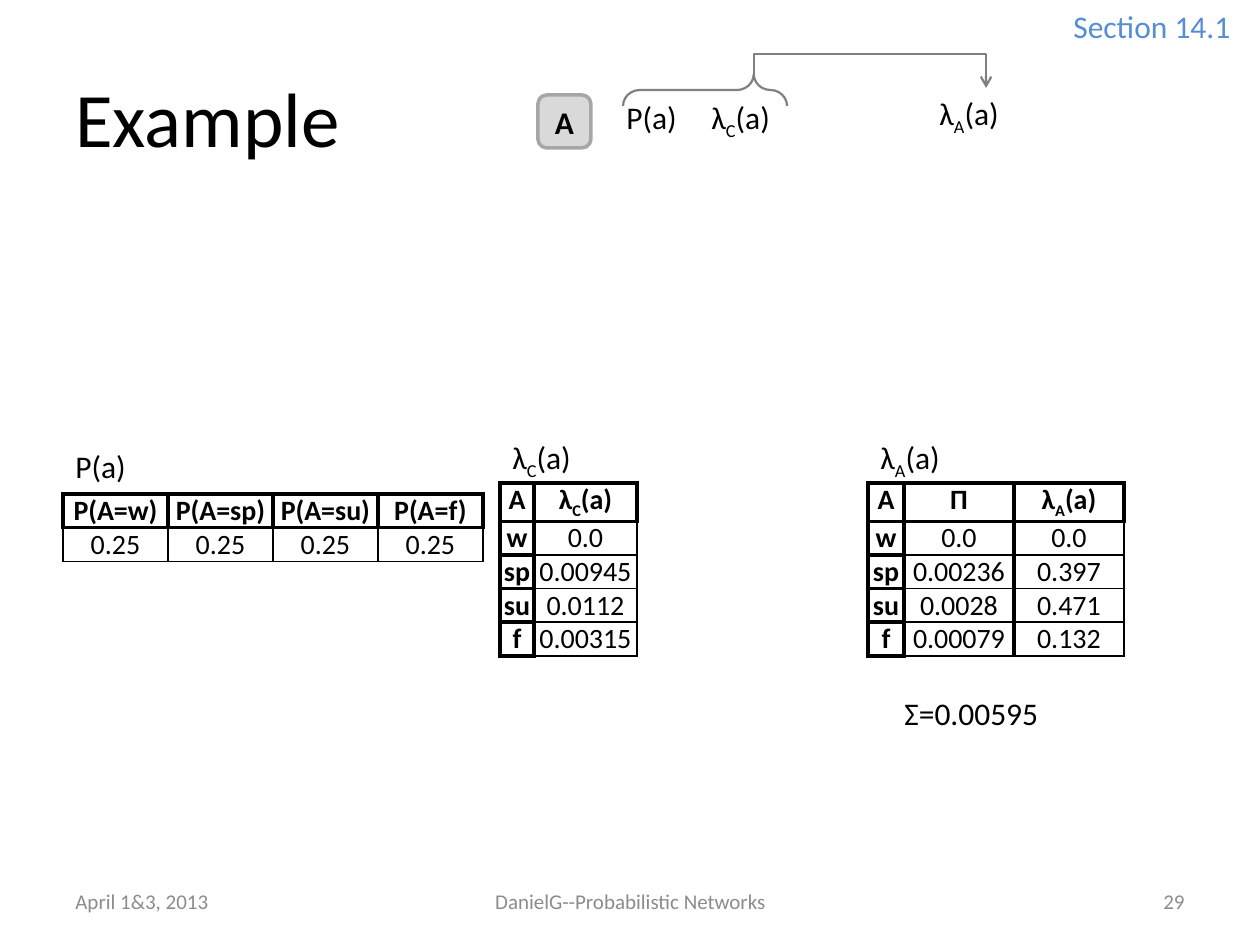
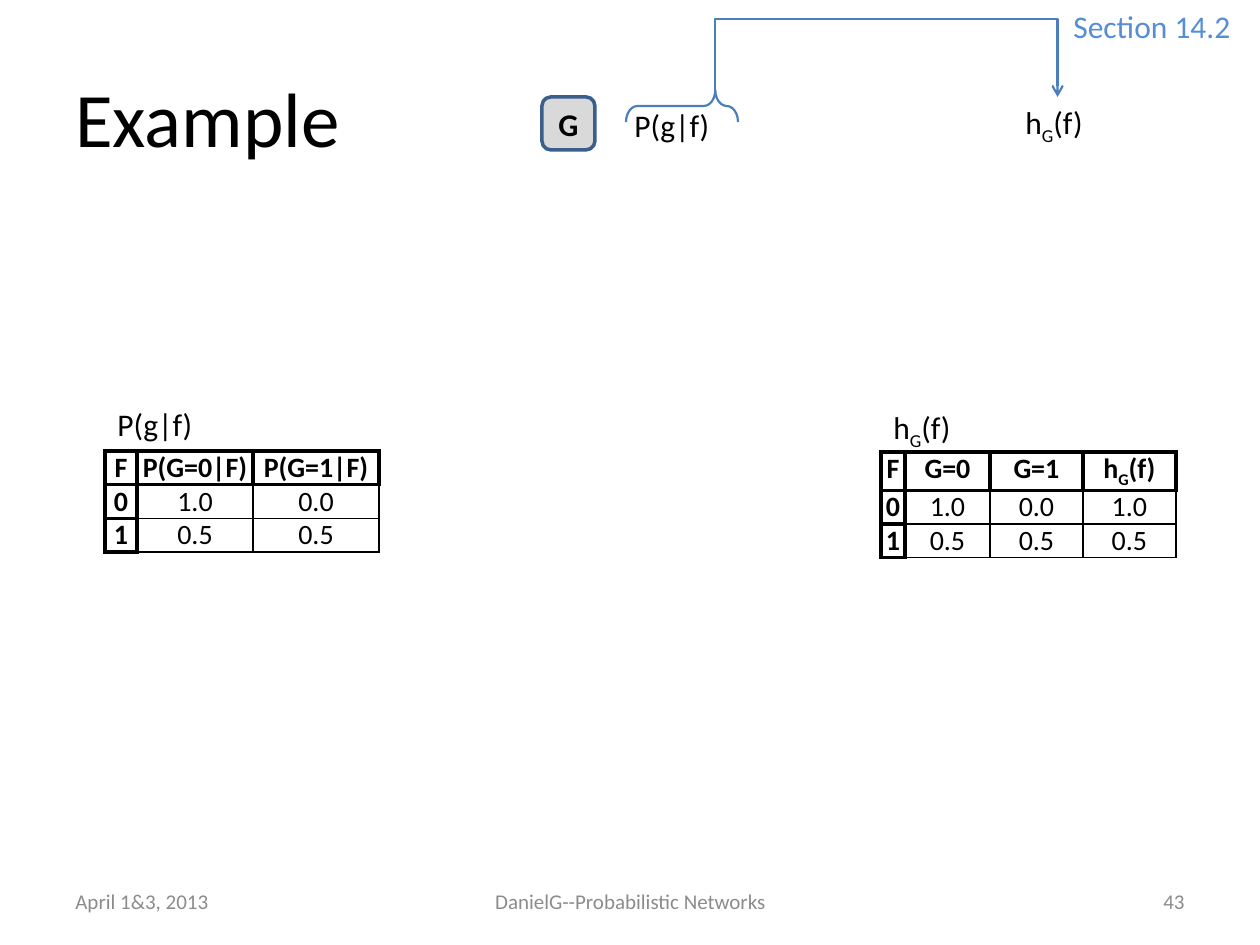
from lxml import etree
from pptx import Presentation
from pptx import util as u
from pptx.dml.color import RGBColor
from pptx.enum import shapes, text
from pptx.oxml.ns import qn

COLOURS = {"ink": "000000", "footer": "8C8C8C", "section": "558ED5",
           "badge": "D9D9D9", "grey_edge": "A6A6A6", "grey_line": "808080",
           "blue_edge": "3A5F8C", "blue_line": "4B7EBC"}
FONT = "Calibri"
SLIDE_W, SLIDE_H = 1260, 945
BADGE = 53
LABEL_H = 50
BRACE_H = 32
BRACE_CURVE, BRACE_TIP = 0.576, 0.203
THICK, THIN = 2.25, 1
LEFT, CENTER, RIGHT = text.PP_ALIGN.LEFT, text.PP_ALIGN.CENTER, text.PP_ALIGN.RIGHT


def px(length):
    return u.Emu(round(length * 914400 / 126))


def rgb(name):
    return RGBColor.from_string(COLOURS[name])


def write(frame, words, size=18, colour="ink", bold=False, align=LEFT):
    """Fill a text frame; the letter after an underscore is a subscript."""
    para = frame.paragraphs[0]
    para.alignment = align
    base, _, tail = words.partition("_")
    for part, is_sub in ((base, False), (tail[:1], True), (tail[1:], False)):
        if not part:
            continue
        run = para.add_run()
        run.text = part
        run.font.name, run.font.size, run.font.bold = FONT, u.Pt(size), bold
        run.font.color.rgb = rgb(colour)
        if is_sub:
            run.font._element.set("baseline", "-25000")


def add_label(slide, words, box, middle=False, wrap=True, **style):
    frame = slide.shapes.add_textbox(*map(px, box)).text_frame
    frame.word_wrap = wrap
    if middle:
        frame.vertical_anchor = text.MSO_ANCHOR.MIDDLE
    write(frame, words, **style)


def add_outline(slide, kind, box, line, width):
    shape = slide.shapes.add_shape(kind, *map(px, box))
    shape.shadow.inherit = False
    shape.fill.background()
    shape.line.color.rgb = rgb(line)
    shape.line.width = u.Pt(width)
    return shape


# Title, section mark and footer shared by the slides
def add_page(prs, section, number):
    slide = prs.slides.add_slide(prs.slide_layouts[6])
    add_label(slide, "Example", (63, 38, 1134, 157), middle=True, size=44)
    add_label(slide, section, (1061, 1, 192, LABEL_H), wrap=False, colour="section")
    for words, left, width, align in (
            ("April 1&3, 2013", 63, 294, LEFT),
            ("DanielG--Probabilistic Networks", 431, 399, CENTER),
            (number, 903, 294, RIGHT)):
        add_label(slide, words, (left, 876, width, LABEL_H), middle=True,
                  size=12, colour="footer", align=align)
    return slide


# Elbow arrow rising from start to peak, then dropping onto end
def add_elbow_arrow(slide, start, end, peak, line):
    (x1, y1), (x2, y2) = start, end
    drop, span = y2 - y1, x2 - x1
    left, top = (x1 + x2 - drop) / 2, (y1 + y2 - span) / 2
    arrow = slide.shapes.add_connector(
        shapes.MSO_CONNECTOR.ELBOW, px(left + drop), px(top), px(left), px(top + span))
    arrow.line.color.rgb = rgb(line)
    arrow.line.width = u.Pt(1.25)
    props = arrow._element.spPr
    props.find(qn("a:xfrm")).set("rot", "16200000")
    guides = props.find(qn("a:prstGeom")).find(qn("a:avLst"))
    bend = round((peak - y1) / drop * 100000)
    etree.SubElement(guides, qn("a:gd"), name="adj1", fmla=f"val {bend}")
    etree.SubElement(props.find(qn("a:ln")), qn("a:tailEnd"), type="arrow")
    etree.SubElement(props, qn("a:effectLst"))


# Node badge, braced factors and the resulting message; the arrow peaks at the box top
def add_flow(slide, box, node, factors, brace, result, theme):
    left, top, width, height = box
    badge_top = top + height - BADGE
    badge = add_outline(slide, shapes.MSO_SHAPE.ROUNDED_RECTANGLE,
                        (left, badge_top, BADGE, BADGE), theme + "_edge", 2)
    badge.fill.solid()
    badge.fill.fore_color.rgb = rgb("badge")
    badge.text_frame.vertical_anchor = text.MSO_ANCHOR.MIDDLE
    write(badge.text_frame, node, bold=True, align=CENTER)

    for words, dx, dy, label_w in factors:
        add_label(slide, words, (left + dx, badge_top + dy, label_w, LABEL_H))

    dx, dy, brace_w = brace
    brace_left, brace_top = left + dx, badge_top + dy
    turned = (brace_left + (brace_w - BRACE_H) / 2,
              brace_top + (BRACE_H - brace_w) / 2, BRACE_H, brace_w)
    bracket = add_outline(slide, shapes.MSO_SHAPE.LEFT_BRACE, turned, theme + "_line", 1.25)
    bracket.rotation = 90
    bracket.adjustments[0], bracket.adjustments[1] = BRACE_CURVE, BRACE_TIP

    words, dy, result_w = result
    result_top = badge_top + dy
    add_label(slide, words, (left + width - result_w, result_top, result_w, LABEL_H))
    add_elbow_arrow(slide, (brace_left + brace_w * (1 - BRACE_TIP), brace_top),
                    (left + width - result_w / 2, result_top), top, theme + "_line")


def set_borders(cell, widths):
    props = cell._tc.get_or_add_tcPr()
    for position, (side, width) in enumerate(widths.items()):
        line = etree.Element(qn(f"a:ln{side}"), w=str(u.Pt(width)))
        fill = etree.SubElement(line, qn("a:solidFill"))
        etree.SubElement(fill, qn("a:srgbClr"), val=COLOURS["ink"])
        props.insert(position, line)


# Table with a label above; edges that touch a heading cell are thick
def add_probabilities(slide, box, label, rise, widths, rows, row_heads=True, thick_after=()):
    left, top, height = box
    add_label(slide, label, (left, top - rise, 136, LABEL_H))
    table = slide.shapes.add_table(len(rows), len(widths), px(left), px(top),
                                   px(sum(widths)), px(height)).table
    table.first_row = table.horz_banding = False
    for column, width in zip(table.columns, widths):
        column.width = px(width)

    def is_head(r, c):
        return r == 0 or (row_heads and c == 0)

    for r, row in enumerate(rows):
        for c, words in enumerate(row):
            cell = table.cell(r, c)
            cell.margin_left = cell.margin_right = cell.margin_top = cell.margin_bottom = 0
            cell.fill.background()
            head = is_head(r, c)
            write(cell.text_frame, words, size=16, bold=head, align=CENTER)
            heavy = {"L": head or (c > 0 and is_head(r, c - 1)) or c - 1 in thick_after,
                     "R": head or c in thick_after,
                     "T": head or is_head(r - 1, c),
                     "B": head}
            set_borders(cell, {side: THICK if on else THIN for side, on in heavy.items()})


def build_lambda_slide(prs):
    slide = add_page(prs, "Section 14.1", "29")
    add_flow(slide, (538, 54, 507, 94), "A",
             [("P(a)", 76, -3, 136), ("λ_C(a)", 161, -3, 118)],
             (85, -21, 164), ("λ_A(a)", -7, 118), "grey")
    add_probabilities(slide, (63, 494, 67), "P(a)", 53, [105] * 4,
                      [["P(A=w)", "P(A=sp)", "P(A=su)", "P(A=f)"], ["0.25"] * 4],
                      row_heads=False)
    add_probabilities(slide, (500, 483, 168), "λ_C(a)", 51, [34, 103],
                      [["A", "λ_C(a)"], ["w", "0.0"], ["sp", "0.00945"],
                       ["su", "0.0112"], ["f", "0.00315"]])
    add_probabilities(slide, (868, 483, 168), "λ_A(a)", 51, [36, 110, 110],
                      [["A", "Π", "λ_A(a)"], ["w", "0.0", "0.0"],
                       ["sp", "0.00236", "0.397"], ["su", "0.0028", "0.471"],
                       ["f", "0.00079", "0.132"]], thick_after=(1,))
    add_label(slide, "Σ=0.00595", (892, 688, 168, LABEL_H))


def build_bucket_slide(prs):
    slide = add_page(prs, "Section 14.2", "43")
    add_flow(slide, (542, 19, 560, 131), "G", [("P(g|f)", 80, 3, 116)],
             (84, -7, 112), ("h_G(f)", 0, 89), "blue")
    add_probabilities(slide, (105, 451, 101), "P(g|f)", 52, [32, 116, 126],
                      [["F", "P(G=0|F)", "P(G=1|F)"], ["0", "1.0", "0.0"],
                       ["1", "0.5", "0.5"]])
    add_probabilities(slide, (881, 452, 101), "h_G(f)", 50, [24, 85, 93, 93],
                      [["F", "G=0", "G=1", "h_G(f)"], ["0", "1.0", "0.0", "1.0"],
                       ["1", "0.5", "0.5", "0.5"]])


def main():
    prs = Presentation()
    prs.slide_width, prs.slide_height = px(SLIDE_W), px(SLIDE_H)
    build_lambda_slide(prs)
    build_bucket_slide(prs)
    prs.save("out.pptx")


if __name__ == "__main__":
    main()
